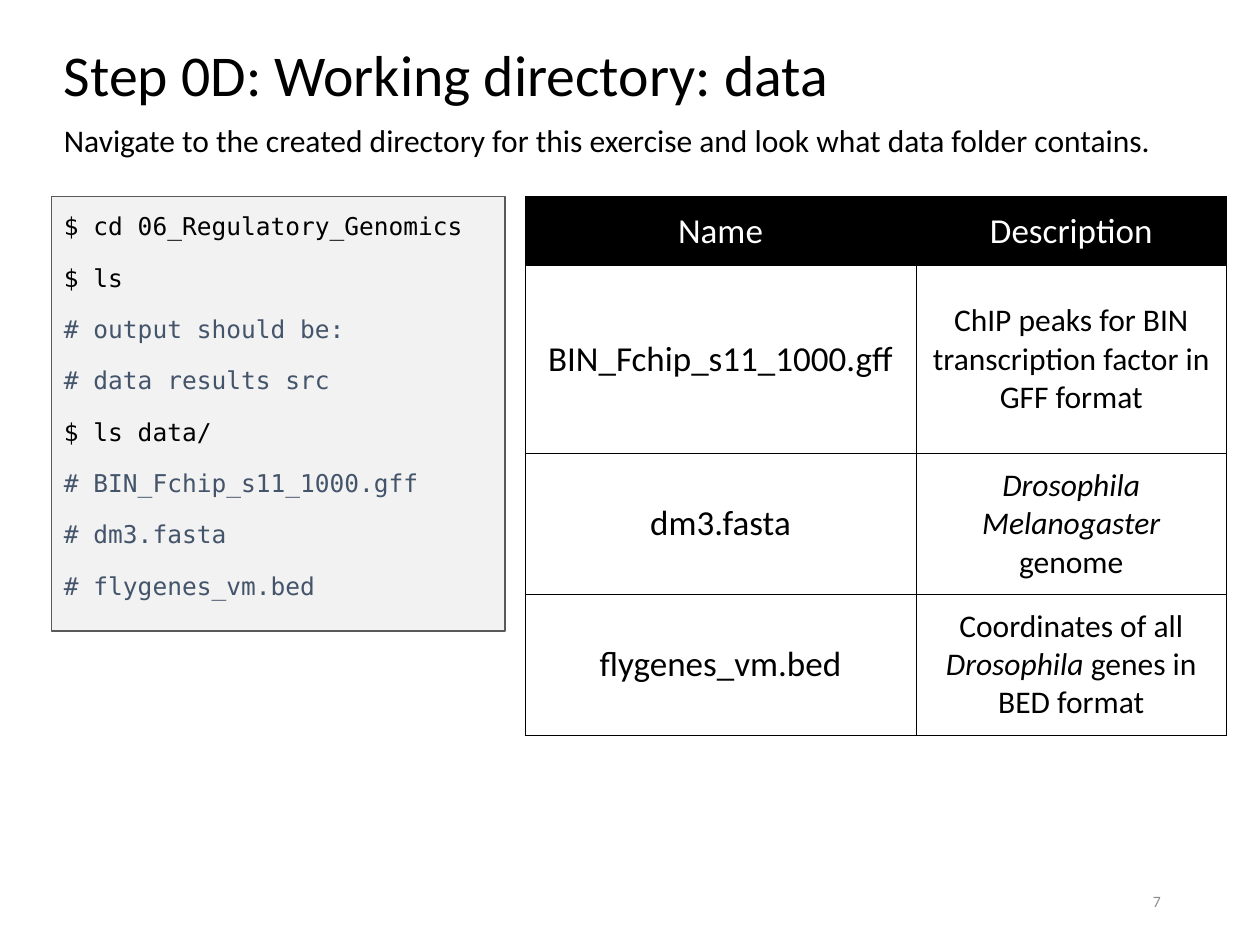
from lxml.etree import SubElement
from pptx import Presentation
from pptx.dml.color import RGBColor
from pptx.enum.shapes import MSO_SHAPE as Shape
from pptx.enum.text import MSO_ANCHOR as Anchor, PP_ALIGN as Align
from pptx.oxml.ns import qn
from pptx.util import Cm, Pt

BLACK = RGBColor(0x00, 0x00, 0x00)
WHITE = RGBColor(0xFF, 0xFF, 0xFF)
GREY = RGBColor(0x8C, 0x8C, 0x8C)
SLATE = RGBColor(0x44, 0x54, 0x6A)
PANEL = RGBColor(0xF2, 0xF2, 0xF2)
OUTLINE = RGBColor(0x59, 0x59, 0x59)


def write(paragraph, runs, size, color=BLACK, font="Calibri", **layout):
    for key, value in layout.items():
        setattr(paragraph, key, value)
    for text, italic in runs:
        run = paragraph.add_run()
        run.text = text
        style = {"name": font, "size": Pt(size), "bold": False, "italic": italic}
        for key, value in style.items():
            setattr(run.font, key, value)
        run.font.color.rgb = color


def add_border(cell, side, points):
    line = SubElement(cell._tc.get_or_add_tcPr(), qn(f"a:{side}"), w=str(Pt(points)))
    fill = SubElement(line, qn("a:solidFill"))
    SubElement(fill, qn("a:srgbClr"), val=str(BLACK))


deck = Presentation()
deck.slide_width, deck.slide_height = Cm(25.4), Cm(19.05)
slide = deck.slides.add_slide(deck.slide_layouts[6])

LEFT, TOP = 1.04, 3.96
labels = [
    ("Step 0D: Working directory: data", (LEFT, -0.28, 21.89, 3.68), 33, BLACK,
     Anchor.MIDDLE, {"line_spacing": 0.9}),
    ("7", (17.93, 17.65, 5.72, 1.02), 9, GREY,
     Anchor.MIDDLE, {"alignment": Align.RIGHT}),
    ("Navigate to the created directory for this exercise and look what data folder contains.",
     (LEFT, 2.31, 23.29, 1.02), 18, BLACK, Anchor.TOP, {}),
]
for text, place, size, color, anchor, layout in labels:
    frame = slide.shapes.add_textbox(*map(Cm, place)).text_frame
    frame.word_wrap = True
    frame.vertical_anchor = anchor
    write(frame.paragraphs[0], [(text, False)], size, color, **layout)

terminal = slide.shapes.add_shape(Shape.RECTANGLE, Cm(LEFT), Cm(TOP), Cm(9.14), Cm(8.76))
terminal.shadow.inherit = False
terminal.fill.solid()
terminal.fill.fore_color.rgb = PANEL
terminal.line.color.rgb = OUTLINE
terminal.line.width = Pt(0.75)
terminal.text_frame.word_wrap = True
terminal.text_frame.vertical_anchor = Anchor.TOP

commands = [
    "$ cd 06_Regulatory_Genomics",
    "$ ls",
    "# output should be:",
    "# data results src",
    "$ ls data/",
    "# BIN_Fchip_s11_1000.gff",
    "# dm3.fasta",
    "# flygenes_vm.bed",
]
for index, command in enumerate(commands):
    frame = terminal.text_frame
    paragraph = frame.add_paragraph() if index else frame.paragraphs[0]
    color = SLATE if command.startswith("#") else BLACK
    write(paragraph, [(command, False)], 14, color, "DejaVu Sans Mono",
          alignment=Align.LEFT, line_spacing=1.3, space_before=Pt(7.5))

files = [
    ("Name", [("Description", False)]),
    ("BIN_Fchip_s11_1000.gff",
     [("ChIP peaks for BIN transcription factor in GFF format", False)]),
    ("dm3.fasta", [("Drosophila Melanogaster ", True), ("genome", False)]),
    ("flygenes_vm.bed",
     [("Coordinates of all ", False), ("Drosophila ", True), ("genes in BED format", False)]),
]
widths = [7.87, 6.27]
heights = [1.4, 3.78, 2.84, 2.84]
table = slide.shapes.add_table(len(heights), len(widths), Cm(10.59), Cm(TOP),
                               Cm(sum(widths)), Cm(sum(heights))).table
table.first_row = table.horz_banding = False
for column, width in zip(table.columns, widths):
    column.width = Cm(width)
for row, height in zip(table.rows, heights):
    row.height = Cm(height)

last = len(files) - 1
for r, (name, description) in enumerate(files):
    for c, runs in enumerate([[(name, False)], description]):
        cell = table.cell(r, c)
        inner = 0.25 if r else 0.75
        borders = {
            "lnL": inner if c else 0.75,
            "lnR": 0.75 if c else inner,
            "lnT": 0.75 if r < 2 else 0.5,
            "lnB": 0.75 if r in (0, last) else 0.5,
        }
        for side, points in borders.items():
            add_border(cell, side, points)
        if r == 0:
            cell.fill.solid()
            cell.fill.fore_color.rgb = BLACK
        else:
            cell.fill.background()
        cell.vertical_anchor = Anchor.MIDDLE
        write(cell.text_frame.paragraphs[0], runs, 18 if r and c else 20,
              BLACK if r else WHITE, alignment=Align.CENTER)

deck.save("out.pptx")
